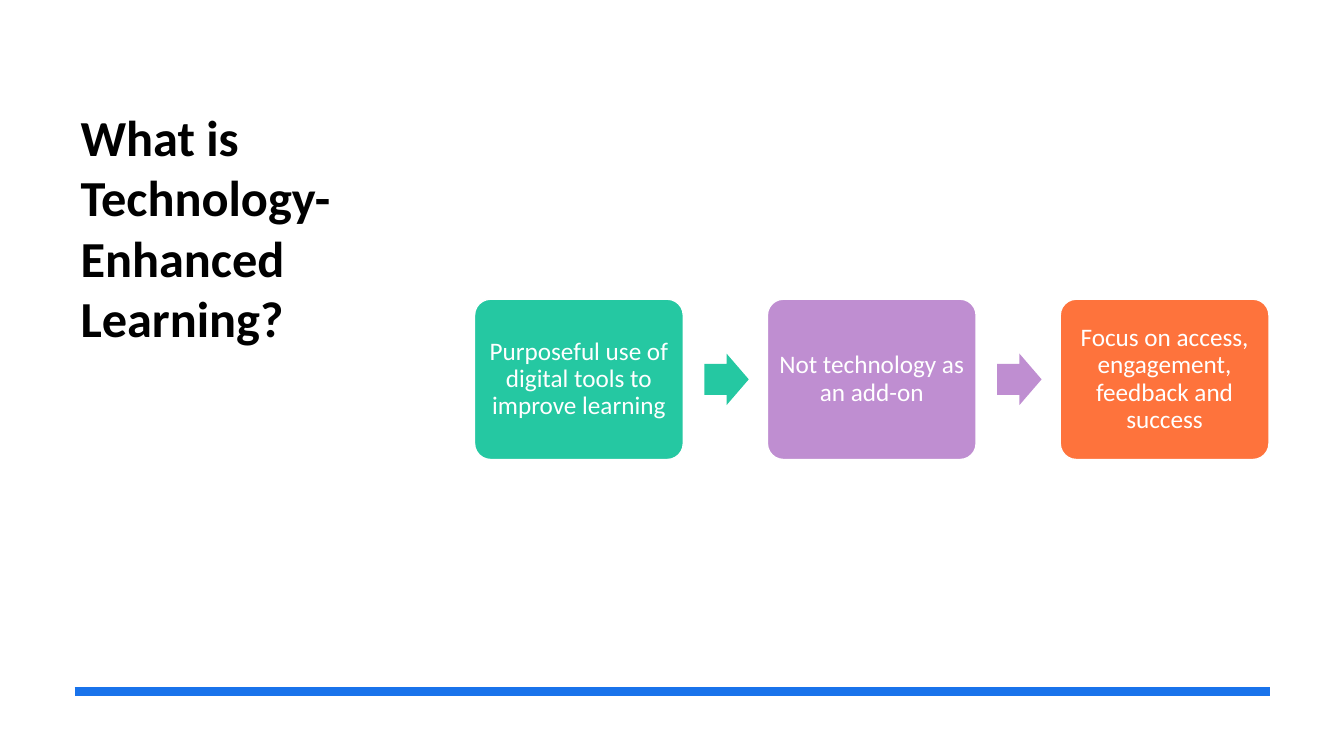
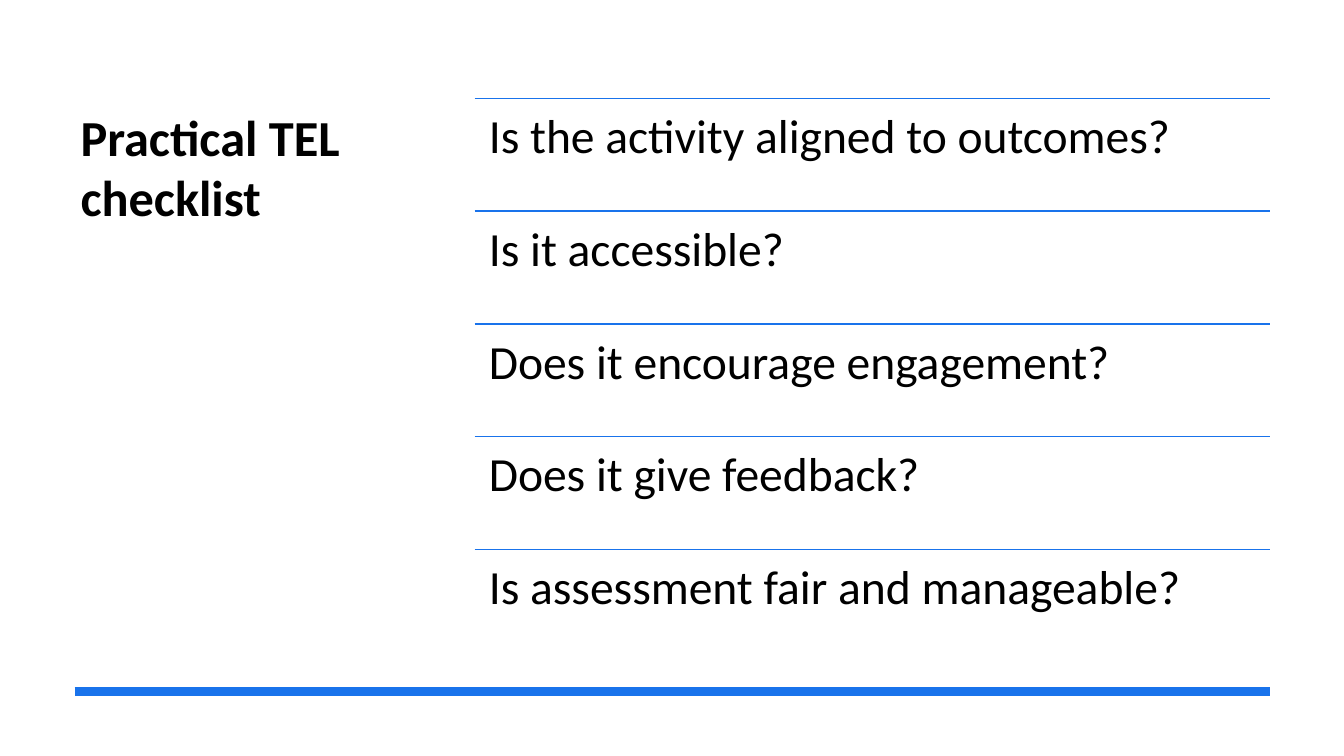
import dataclasses

import pptx
import pptx.dml.color
import pptx.enum.shapes
import pptx.enum.text
import pptx.oxml.ns
import pptx.util
from lxml import etree

Cm = pptx.util.Cm
Pt = pptx.util.Pt
RGB = pptx.dml.color.RGBColor.from_string
SHAPE = pptx.enum.shapes.MSO_SHAPE
ALIGN = pptx.enum.text.PP_ALIGN
ANCHOR = pptx.enum.text.MSO_ANCHOR


@dataclasses.dataclass(frozen=True)
class Theme:
    font: str = "Calibri"
    ink: str = "000000"
    paper: str = "FFFFFF"
    accent: str = "1973EB"
    steps: tuple = ("25C8A2", "BF8ED1", "FE733C")
    title_size: int = 36
    question_size: int = 34
    step_size: int = 18
    footer_weight: int = 6
    divider_weight: int = 1


theme = Theme()


def write(holder, text, *, size, color=theme.ink, bold=False, align=ALIGN.LEFT,
          anchor=ANCHOR.TOP, margins=(0.25, 0.13), spacing=1.0):
    """Fill a shape or text box; margins are (side, top and bottom) in cm."""
    frame = holder.text_frame
    frame.word_wrap = True
    frame.vertical_anchor = anchor
    frame.margin_left = frame.margin_right = Cm(margins[0])
    frame.margin_top = frame.margin_bottom = Cm(margins[1])
    paragraph = frame.paragraphs[0]
    paragraph.alignment = align
    paragraph.line_spacing = spacing
    run = paragraph.add_run()
    run.text = text
    run.font.name = theme.font
    run.font.size = Pt(size)
    run.font.bold = bold
    run.font.color.rgb = RGB(color)


def add_rule(slide, left, top, weight):
    """Draw a horizontal accent line from left to the right margin."""
    rule = slide.shapes.add_connector(
        pptx.enum.shapes.MSO_CONNECTOR.STRAIGHT,
        Cm(left), Cm(top), Cm(content_right), Cm(top))
    rule.line.color.rgb = RGB(theme.accent)
    rule.line.width = Pt(weight)
    etree.SubElement(rule._element.spPr, pptx.oxml.ns.qn("a:effectLst"))


content_left, content_right = 11.96, 32.0

deck = pptx.Presentation()
deck.slide_width, deck.slide_height = Cm(33.87), Cm(19.05)

# Shared frame: title at left, footer rule
slides = []
for heading in ("What is Technology-Enhanced Learning?", "Practical TEL checklist"):
    slide = deck.slides.add_slide(deck.slide_layouts[6])
    slide.background.fill.solid()
    slide.background.fill.fore_color.rgb = RGB(theme.paper)
    title = slide.shapes.add_textbox(Cm(1.78), Cm(2.54), Cm(8.33), Cm(11.56))
    write(title, heading, size=theme.title_size, bold=True)
    add_rule(slide, 1.88, 17.42, theme.footer_weight)
    slides.append(slide)
definition, checklist = slides

# Definition: three steps joined by arrows
steps = (
    "Purposeful use of digital tools to improve learning",
    "Not technology as an add-on",
    "Focus on access, engagement, feedback and success",
)
step_width, step_height, step_pitch = 5.26, 4.04, 7.38
arrow_width, arrow_height, arrow_offset = 1.12, 1.3, 5.79
middle = 9.56

for index, (statement, color) in enumerate(zip(steps, theme.steps)):
    left = content_left + index * step_pitch
    step = definition.shapes.add_shape(
        SHAPE.ROUNDED_RECTANGLE, Cm(left), Cm(middle - step_height / 2),
        Cm(step_width), Cm(step_height))
    step.adjustments[0] = 0.1
    step.shadow.inherit = False
    step.fill.solid()
    step.fill.fore_color.rgb = RGB(color)
    step.line.color.rgb = RGB(theme.paper)
    step.line.width = Pt(1)
    write(step, statement, size=theme.step_size, color=theme.paper,
          align=ALIGN.CENTER, anchor=ANCHOR.MIDDLE, margins=(0.18, 0.18), spacing=0.9)

    if index < len(steps) - 1:
        arrow = definition.shapes.add_shape(
            SHAPE.RIGHT_ARROW, Cm(left + arrow_offset), Cm(middle - arrow_height / 2),
            Cm(arrow_width), Cm(arrow_height))
        arrow.adjustments[0] = 0.6
        arrow.adjustments[1] = 0.5
        arrow.shadow.inherit = False
        arrow.fill.solid()
        arrow.fill.fore_color.rgb = RGB(color)
        arrow.line.fill.background()

# Checklist: one ruled row per question
questions = (
    "Is the activity aligned to outcomes?",
    "Is it accessible?",
    "Does it encourage engagement?",
    "Does it give feedback?",
    "Is assessment fair and manageable?",
)
first_row, row_height = 2.48, 2.84

for index, question in enumerate(questions):
    top = first_row + index * row_height
    add_rule(checklist, content_left, top, theme.divider_weight)
    row = checklist.shapes.add_textbox(
        Cm(content_left), Cm(top), Cm(content_right - content_left), Cm(row_height))
    write(row, question, size=theme.question_size, margins=(0.36, 0.36), spacing=0.9)

deck.save("out.pptx")
